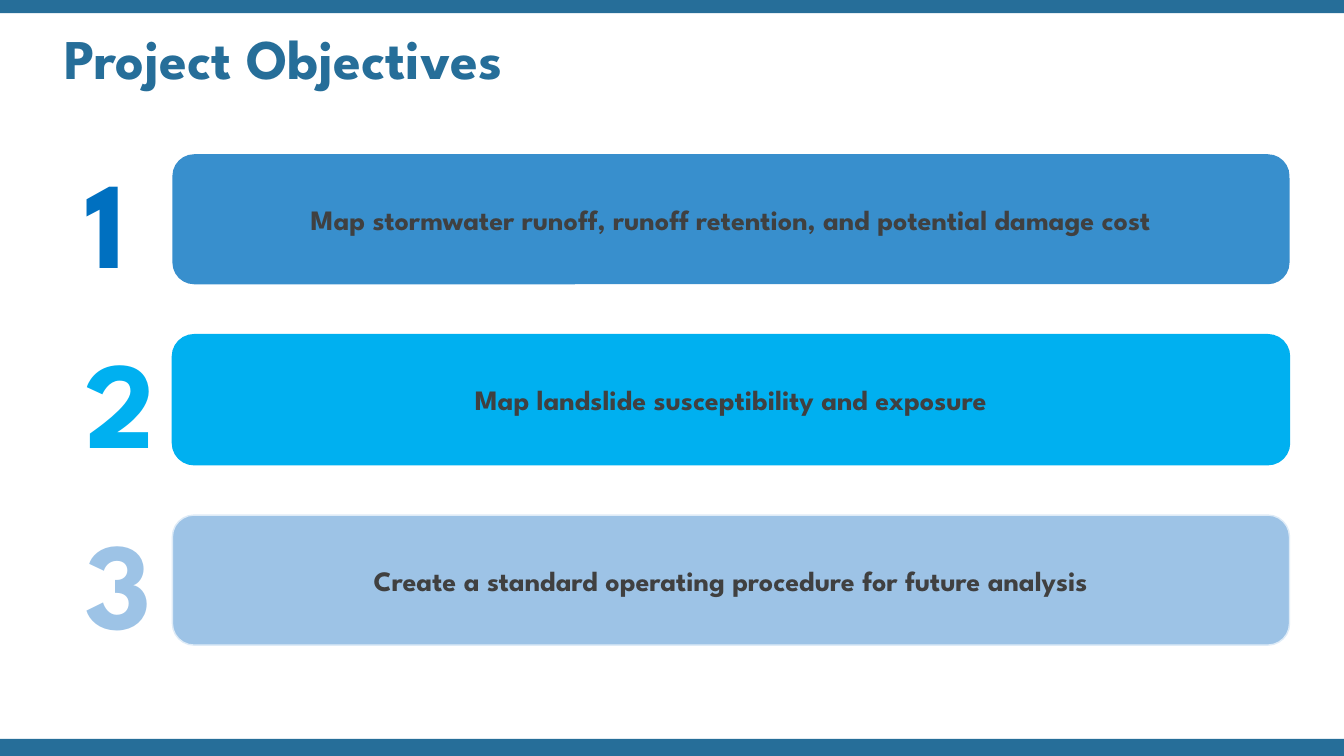
from dataclasses import dataclass

from lxml import etree
from pptx import Presentation
from pptx.dml.color import RGBColor
from pptx.enum import shapes, text
from pptx.oxml import ns
from pptx.util import Inches, Pt


@dataclass(frozen=True)
class Theme:
    """Colours, font and type sizes of the slide."""
    font: str = "League Spartan"
    brand: str = "266E99"
    ink: str = "404040"
    first: str = "0070C0"
    second: str = "00B0F0"
    third: str = "9DC3E6"
    third_line: str = "DEEBF7"
    title_size: int = 40
    label_size: int = 20
    number_size: int = 88


THEME = Theme()


def add_run(p, words, size, color):
    """Add one bold run in the theme font."""
    r = p.add_run()
    r.text = words
    r.font.name = THEME.font
    r.font.size = Pt(size)
    r.font.bold = True
    r.font.color.rgb = RGBColor.from_string(color)


def add_block(s, kind, box, fill, line=None, alpha=None):
    """Add a flat filled shape, with an optional outline and opacity percent."""
    sp = s.shapes.add_shape(kind, *map(Inches, box))
    sp.shadow.inherit = False
    sp.fill.solid()
    sp.fill.fore_color.rgb = RGBColor.from_string(fill)
    if alpha:
        color = sp.fill._xPr.find(".//" + ns.qn("a:srgbClr"))
        etree.SubElement(color, ns.qn("a:alpha"), val=str(alpha * 1000))
    if line:
        sp.line.color.rgb = RGBColor.from_string(line)
        sp.line.width = Pt(1)
    else:
        sp.line.fill.background()
    return sp


def set_title(s, words):
    """Place and format the title placeholder."""
    sp = s.shapes.title
    sp.left, sp.top, sp.width, sp.height = map(Inches, (0.54, 0.39, 11.1, 0.44))
    tf = sp.text_frame
    tf.auto_size = text.MSO_AUTO_SIZE.NONE
    tf.vertical_anchor = text.MSO_ANCHOR.MIDDLE
    p = tf.paragraphs[0]
    p.alignment = text.PP_ALIGN.LEFT
    p.line_spacing = 0.9
    add_run(p, words, THEME.title_size, THEME.brand)


def add_objective(s, top, words, fill, line, alpha):
    """Add a rounded bar with a centred objective."""
    box = (1.71, top, 11.08, 1.29)
    sp = add_block(s, shapes.MSO_SHAPE.ROUNDED_RECTANGLE, box, fill, line, alpha)
    tf = sp.text_frame
    tf.word_wrap = True
    tf.vertical_anchor = text.MSO_ANCHOR.MIDDLE
    p = tf.paragraphs[0]
    p.alignment = text.PP_ALIGN.CENTER
    add_run(p, words, THEME.label_size, THEME.ink)


def add_number(s, top, number, color):
    """Add the large number beside an objective."""
    tf = s.shapes.add_textbox(*map(Inches, (0.75, top, 0.79, 1.58))).text_frame
    tf.word_wrap = True
    add_run(tf.paragraphs[0], str(number), THEME.number_size, color)


def main():
    """Build and save the slide."""
    prs = Presentation()
    prs.slide_width, prs.slide_height = Inches(13.33), Inches(7.5)
    s = prs.slides.add_slide(prs.slide_layouts[5])
    for top, height in ((0, 0.13), (7.33, 0.17)):
        add_block(s, shapes.MSO_SHAPE.RECTANGLE, (0, top, 13.33, height), THEME.brand)
    set_title(s, "Project Objectives")
    objectives = (
        ("Map stormwater runoff, runoff retention, and potential damage cost",
         THEME.first, None, 78),
        ("Map landslide susceptibility and exposure",
         THEME.second, THEME.second, None),
        ("Create a standard operating procedure for future analysis",
         THEME.third, THEME.third_line, None),
    )
    for i, (words, fill, line, alpha) in enumerate(objectives):
        offset = 1.79 * i
        add_objective(s, 1.53 + offset, words, fill, line, alpha)
        add_number(s, 1.39 + offset, i + 1, fill)
    prs.save("out.pptx")


if __name__ == "__main__":
    main()
